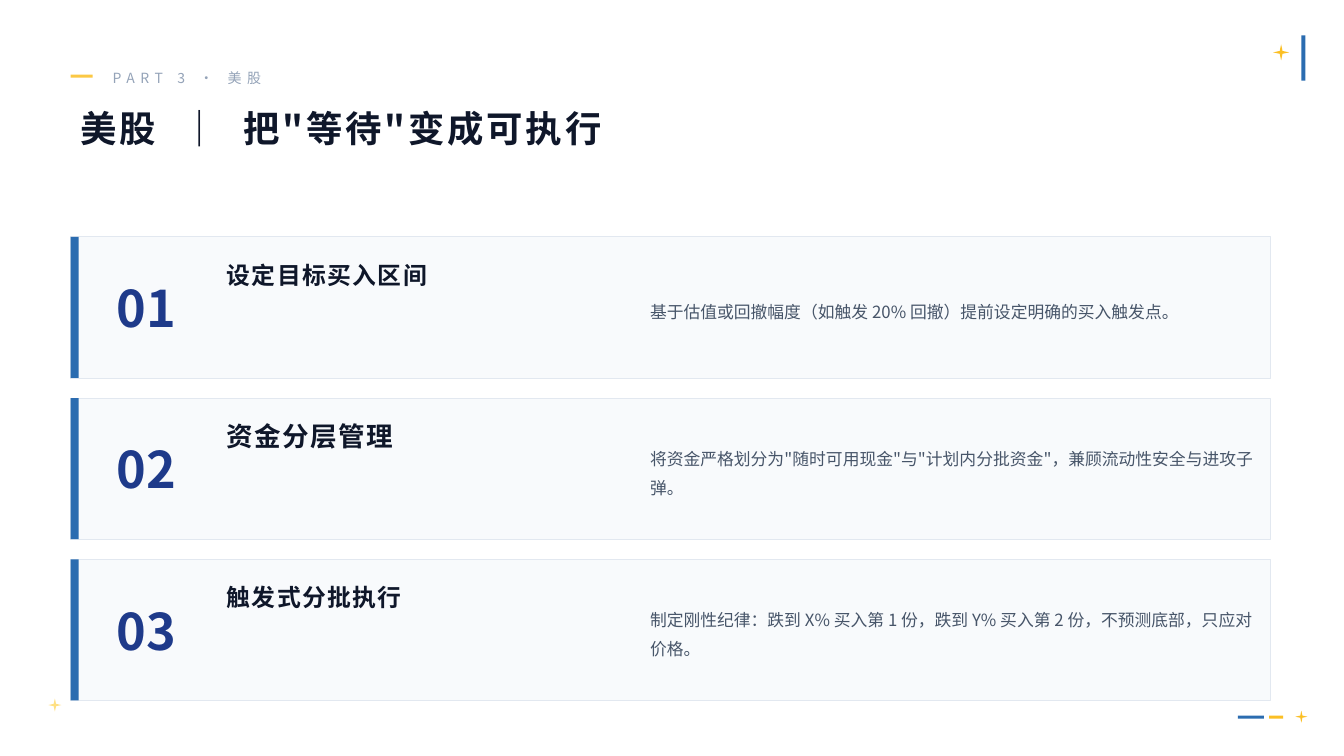
import pptx
import pptx.dml.color
import pptx.enum.shapes
import pptx.enum.text
import pptx.oxml
import pptx.oxml.ns
import pptx.util

SHAPE = pptx.enum.shapes.MSO_SHAPE
ALIGN = pptx.enum.text.PP_ALIGN
ANCHOR = pptx.enum.text.MSO_ANCHOR

CELL = 0.1  # inches per grid column and row
FONT = "Noto Sans CJK SC"
INK, NAVY, BLUE = "0F172A", "1E3A8A", "2B6CB0"
GOLD, PALE_GOLD = "FBBF24", "FFE082"
SLATE, MUTED = "475569", "94A3B8"
CARD_FILL, CARD_LINE = "F8FAFC", "E2E8F0"

CARD_LEFT, CARD_TOP, CARD_WIDTH, CARD_HEIGHT = 7, 23.5, 119, 14
CARD_STEP = 16
STEPS = [
    ("设定目标买入区间", 17,
     "基于估值或回撤幅度（如触发 20% 回撤）提前设定明确的买入触发点。"),
    ("资金分层管理", 19,
     "将资金严格划分为\"随时可用现金\"与\"计划内分批资金\"，兼顾流动性安全与进攻子弹。"),
    ("触发式分批执行", 17,
     "制定刚性纪律：跌到 X% 买入第 1 份，跌到 Y% 买入第 2 份，不预测底部，只应对价格。"),
]


def color(hex_text):
    return pptx.dml.color.RGBColor.from_string(hex_text)


def grid(*cells):
    """Turn columns and rows into slide lengths."""
    return [pptx.util.Inches(cell * CELL) for cell in cells]


def write(box, text, size, ink, bold=False, spacing=0, align=ALIGN.LEFT,
          anchor=ANCHOR.MIDDLE, line_spacing=None):
    """Fill a box with one paragraph; text is a string or (string, spacing) pairs."""
    frame = box.text_frame
    frame.word_wrap = True
    frame.auto_size = pptx.enum.text.MSO_AUTO_SIZE.NONE
    frame.vertical_anchor = anchor
    para = frame.paragraphs[0]
    para.alignment = align
    if line_spacing:
        para.line_spacing = line_spacing
    pieces = [(text, spacing)] if isinstance(text, str) else text
    for words, tracking in pieces:
        span = para.add_run()
        span.text = words
        span.font.size = pptx.util.Pt(size)
        span.font.bold = bold
        span.font.name = FONT
        span.font.color.rgb = color(ink)
        properties = span.font._element
        east_asian = pptx.oxml.parse_xml(
            f'<a:ea {pptx.oxml.ns.nsdecls("a")} typeface="{FONT}"/>')
        properties.append(east_asian)
        if tracking:
            properties.set("spc", str(round(tracking * 100)))


class Page:
    """A title-only slide whose elements are placed on the grid."""

    def __init__(self, deck):
        self.slide = deck.slides.add_slide(deck.slide_layouts[5])

    def title(self, place, text, **style):
        box = self.slide.shapes.title
        box.left, box.top, box.width, box.height = grid(*place)
        write(box, text, **style)

    def text(self, place, text, **style):
        write(self.slide.shapes.add_textbox(*grid(*place)), text, **style)

    def shape(self, place, fill, kind=SHAPE.RECTANGLE, line=None, opacity=None):
        shape = self.slide.shapes.add_shape(kind, *grid(*place))
        shape.shadow.inherit = False
        shape.fill.solid()
        shape.fill.fore_color.rgb = color(fill)
        if line:
            shape.line.color.rgb = color(line)
            shape.line.width = pptx.util.Pt(0.5)
        else:
            shape.line.fill.background()
        if opacity:
            tint = shape._element.spPr.find(".//" + pptx.oxml.ns.qn("a:srgbClr"))
            tint.append(pptx.oxml.parse_xml(
                f'<a:alpha {pptx.oxml.ns.nsdecls("a")} val="{opacity * 1000}"/>'))

    def star(self, left, top, size, fill):
        self.shape((left, top, size, size), fill, kind=SHAPE.STAR_4_POINT)

    def card(self, index, heading, heading_size, detail):
        top = CARD_TOP + index * CARD_STEP
        self.shape((CARD_LEFT, top, CARD_WIDTH, CARD_HEIGHT), CARD_FILL, line=CARD_LINE)
        self.shape((CARD_LEFT, top, 0.8, CARD_HEIGHT), BLUE)
        self.text((9.5, top, 10, CARD_HEIGHT), f"{index + 1:02}",
                  size=36, ink=NAVY, bold=True, align=ALIGN.CENTER)
        self.text((21.5, top + 1, 40, 5.5), heading,
                  size=heading_size, ink=INK, bold=True, spacing=1)
        self.text((63.5, top, 62.5, CARD_HEIGHT), detail,
                  size=12, ink=SLATE, line_spacing=1.45)


def main():
    deck = pptx.Presentation()
    deck.slide_width, deck.slide_height = grid(133.33, 75)
    page = Page(deck)

    page.shape((129.1, 3.5, 0.4, 4.5), BLUE)
    page.star(126.3, 4.4, 1.6, GOLD)
    page.shape((122.8, 71, 2.6, 0.3), BLUE)
    page.shape((125.9, 71, 1.4, 0.3), GOLD)
    page.star(128.5, 70.5, 1.2, GOLD)
    page.star(4.8, 69.3, 1.3, PALE_GOLD)

    page.shape((7, 7.4, 2.2, 0.3), GOLD, opacity=85)
    page.text((10.2, 6.2, 80, 3), "PART 3 · 美股", size=10, ink=MUTED, spacing=4)
    wide_space = (" ", 10)
    page.title((7, 10, 120, 10),
               [("美股", 2), wide_space, ("｜", 2), wide_space,
                ("把\"等待\"变成可执行", 2)],
               size=26, ink=INK, bold=True, anchor=ANCHOR.TOP)

    for index, step in enumerate(STEPS):
        page.card(index, *step)
    deck.save("out.pptx")


if __name__ == "__main__":
    main()
